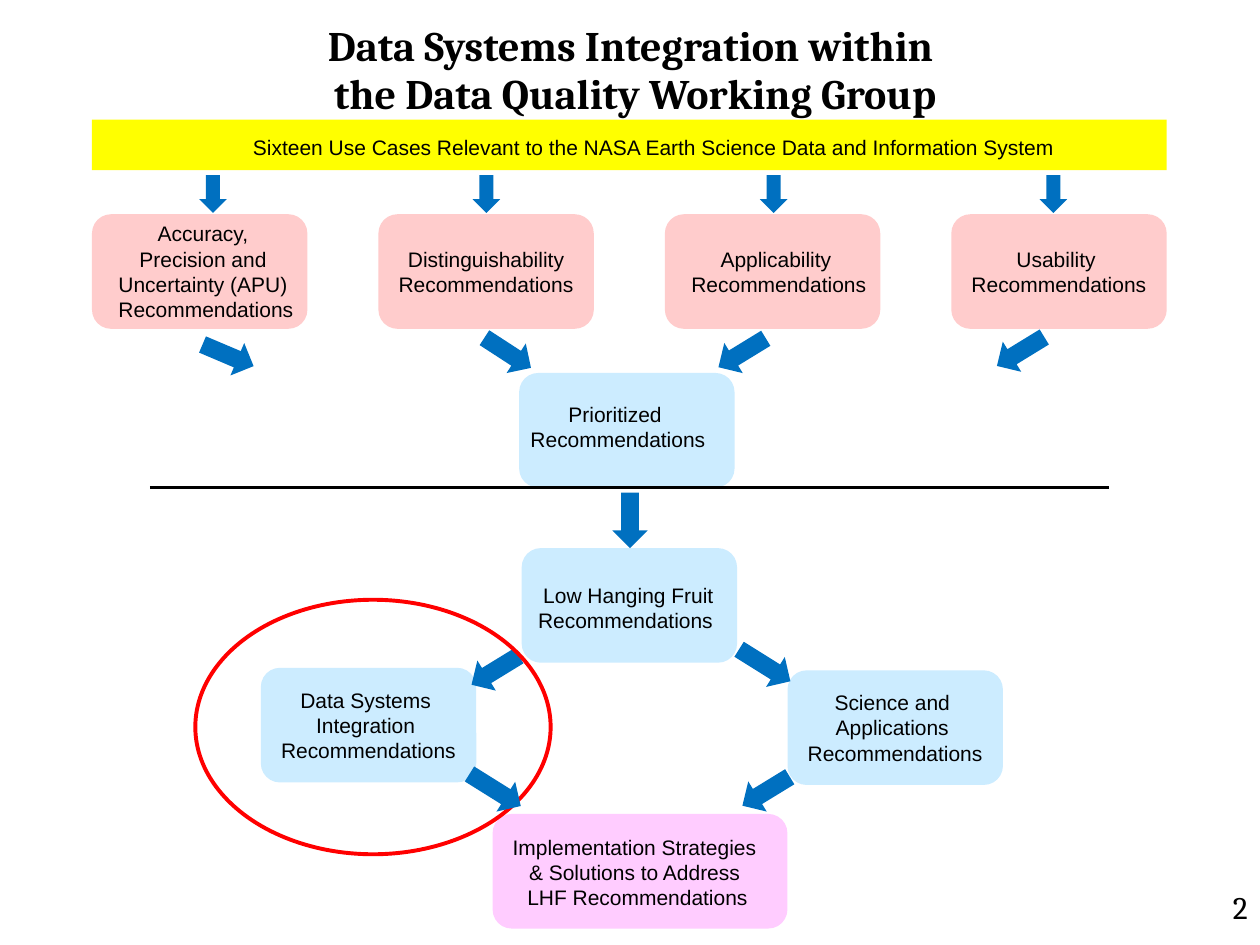
"""Build the slide on data systems integration within the working group."""
from dataclasses import dataclass

from lxml import etree
from pptx import Presentation
from pptx import util as u
from pptx.dml.color import RGBColor
from pptx.enum import shapes, text
from pptx.oxml.ns import qn


@dataclass(frozen=True)
class Theme:
    """Hold the colours, fonts and type sizes."""
    pink: str = "FFCCCC"
    blue: str = "CCECFF"
    mauve: str = "FFCCFF"
    yellow: str = "FFFF00"
    arrow: str = "0070C0"
    red: str = "FF0000"
    ink: str = "000000"
    head: str = "Cambria"
    body: str = "Arial"
    big: int = 24
    mid: int = 18
    small: int = 12


T = Theme()
WIDE, HIGH = 10, 7.5
LEFT, BAR = 0.73, 8.53
BOX_W, BOX_H = 1.71, 0.91
STEP = (BAR - BOX_W) / 3
ROW = 1.7

TITLE = "Data Systems Integration within \vthe Data Quality Working Group"
BANNER = "Sixteen Use Cases Relevant to the NASA Earth Science Data and Information System"
REC = "Recommendations"
TOPICS = [
    (["Accuracy, ", "Precision and ", "Uncertainty (APU) ", REC], 0.05),
    (["Distinguishability", REC], 0),
    (["Applicability ", REC], 0.05),
    (["Usability ", REC], 0),
]
STAGES = [
    (["Prioritized ", REC], T.blue, 4.12, 2.96, BOX_W, -0.07, -0.03),
    ([" Low Hanging Fruit", REC + " "], T.blue, 4.14, 4.35, BOX_W, -0.03, 0.02),
    (["Data Systems ", "Integration ", REC], T.blue, 2.07, 5.3, BOX_W, 0, 0),
    (["Science and ", "Applications ", REC], T.blue, 6.25, 5.32, BOX_W, 0, 0),
    (["Implementation Strategies ", "& Solutions to Address ", "LHF Recommendations"],
     T.mauve, 3.91, 6.46, 2.34, -0.02, 0.01),
]
DROPS = [1.58, 3.75, 6.03, 8.25]
LEFTWARD, RIGHTWARD = 58.5, 302
SLANTS = [
    (1.67, 2.6, 0.44, 293), (3.89, 2.58, 0.44, 303),
    (5.75, 2.58, 0.44, LEFTWARD), (7.96, 2.57, 0.44, LEFTWARD),
    (3.79, 5.1, 0.44, LEFTWARD), (5.93, 5.04, 0.48, RIGHTWARD),
    (5.94, 6.06, 0.44, LEFTWARD),
]
LATE = [(4.86, 3.91, 0.44, 0), (3.79, 6.03, 0.48, RIGHTWARD)]


def paint(color):
    return RGBColor.from_string(color)


def place(item, x, y, w, h):
    item.left, item.top, item.width, item.height = map(u.Inches, (x, y, w, h))


def write(frame, lines, size=T.small, font=T.body, bold=False,
          align=text.PP_ALIGN.CENTER, wrap=False, anchor=text.MSO_ANCHOR.TOP, space=None):
    frame.word_wrap = wrap
    frame.vertical_anchor = anchor
    for i, line in enumerate(lines):
        para = frame.add_paragraph() if i else frame.paragraphs[0]
        para.text = line
        para.alignment = align
        para.line_spacing = space
        for run in para.runs:
            run.font.size, run.font.name, run.font.bold = u.Pt(size), font, bold
            run.font.color.rgb = paint(T.ink)


def draw(slide, kind, x, y, w, h, fill=None, line=None, turn=0):
    shape = slide.shapes.add_shape(kind, *map(u.Inches, (x, y, w, h)))
    shape.shadow.inherit = False
    shape.rotation = turn
    if fill:
        shape.fill.solid()
        shape.fill.fore_color.rgb = paint(fill)
    else:
        shape.fill.background()
    if line:
        shape.line.color.rgb = paint(line)
        shape.line.width = u.Pt(2.25)
    else:
        shape.line.fill.background()


def label(slide, lines, x, y, w, h, **style):
    box = slide.shapes.add_textbox(*map(u.Inches, (x, y, w, h)))
    write(box.text_frame, lines, **style)


def point(slide, x, y, h, turn, w=0.28):
    draw(slide, shapes.MSO_SHAPE.DOWN_ARROW, x, y, w, h, T.arrow, turn=turn)


def rule(slide, x, y, end):
    line = slide.shapes.add_connector(
        shapes.MSO_CONNECTOR.STRAIGHT, *map(u.Inches, (x, y, end, y)))
    line.line.color.rgb = paint(T.ink)
    line.line.width = u.Pt(2)
    etree.SubElement(line._element.spPr, qn("a:effectLst"))


def main():
    deck = Presentation()
    deck.slide_width, deck.slide_height = u.Inches(WIDE), u.Inches(HIGH)
    slide = deck.slides.add_slide(deck.slide_layouts[5])

    cards = [(lines, T.pink, LEFT + i * STEP, ROW, BOX_W, dx, 0)
             for i, (lines, dx) in enumerate(TOPICS)] + STAGES
    for _, fill, x, y, w, _, _ in cards:
        draw(slide, shapes.MSO_SHAPE.ROUNDED_RECTANGLE, x, y, w, BOX_H, fill)
    draw(slide, shapes.MSO_SHAPE.RECTANGLE, LEFT, 0.95, BAR, 0.4, T.yellow)

    place(slide.shapes.title, 1.64, 0.27, 6.8, 0.59)
    write(slide.shapes.title.text_frame, [TITLE], size=T.big, font=T.head, bold=True,
          wrap=True, anchor=text.MSO_ANCHOR.MIDDLE, space=0.94)
    label(slide, ["2"], 7.92, 7, 2.08, 0.5, size=T.mid, font=T.head,
          align=text.PP_ALIGN.RIGHT, wrap=True)
    for lines, _, x, y, w, dx, dy in cards:
        tall = 0.1 + 0.2 * len(lines)
        label(slide, lines, x + dx + 0.05, y + dy + (BOX_H - tall) / 2, w - 0.1, tall)
    label(slide, [BANNER], 1.91, 1.02, 6.57, 0.3, align=text.PP_ALIGN.LEFT)

    for x in DROPS:
        point(slide, x, 1.39, 0.3, 0, w=0.22)
    for slant in SLANTS:
        point(slide, *slant)
    draw(slide, shapes.MSO_SHAPE.OVAL, 1.55, 4.76, 2.82, 2.02, line=T.red)
    for late in LATE:
        point(slide, *late)
    rule(slide, 1.19, 3.87, 8.8)
    deck.save("out.pptx")


if __name__ == "__main__":
    main()
